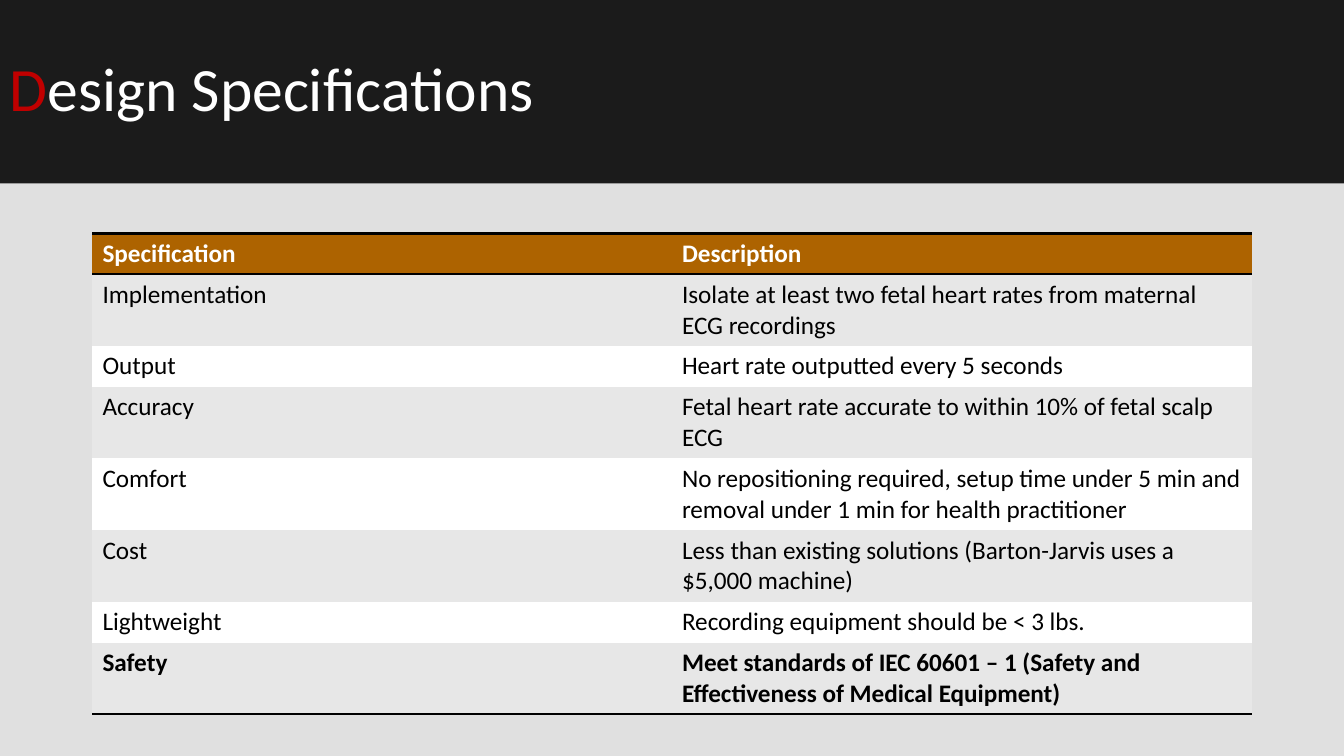
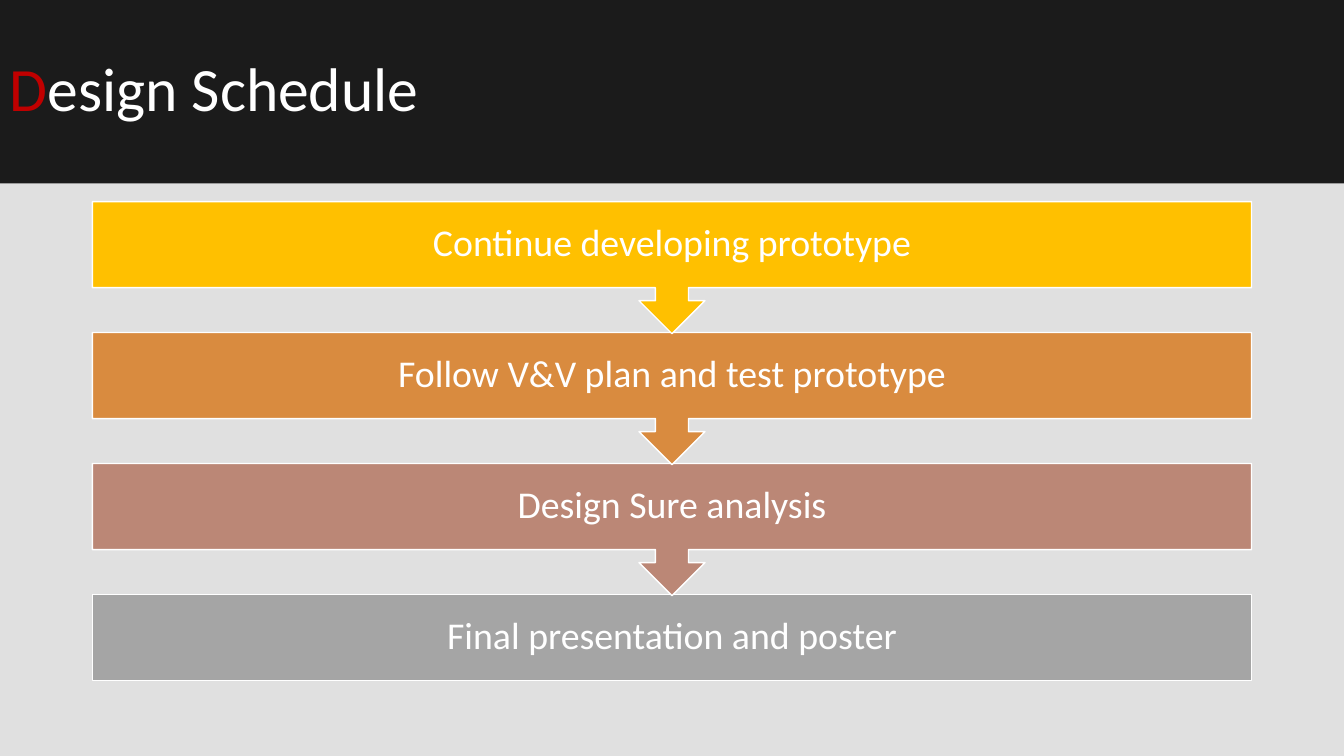
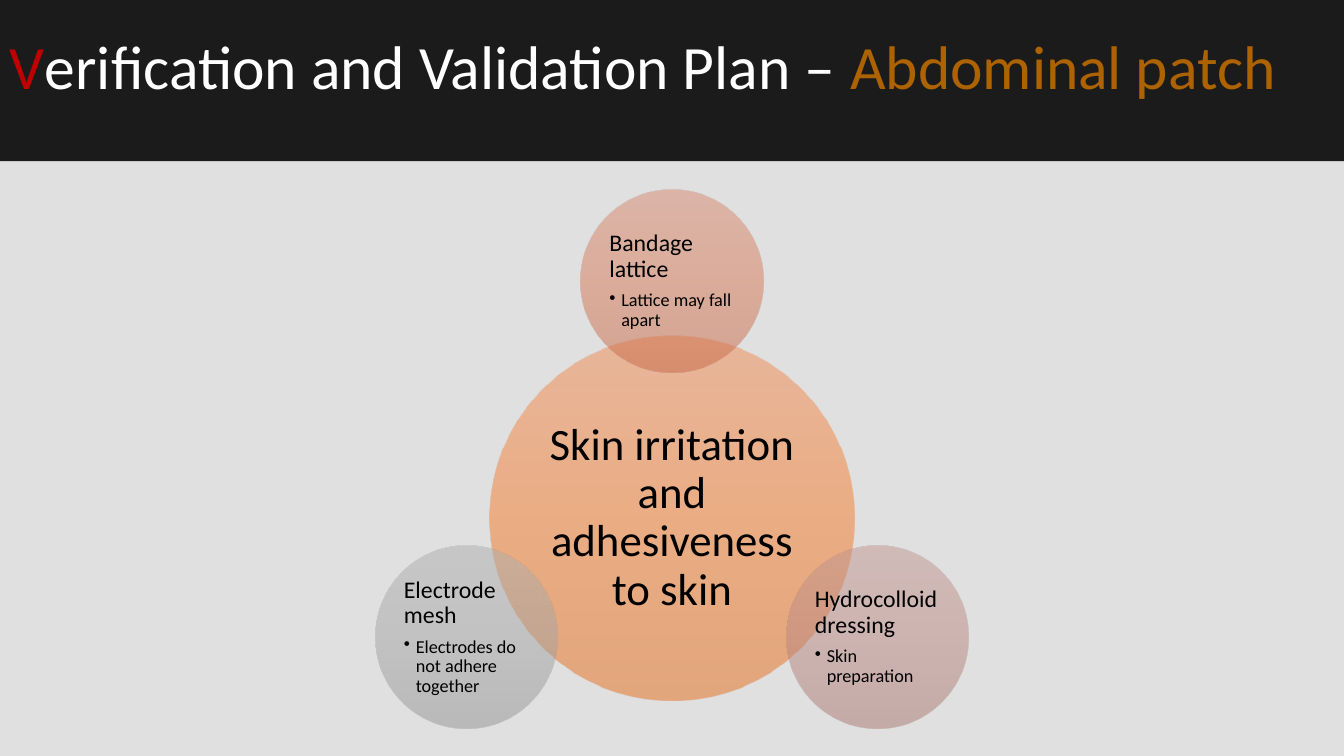
"""Build a three-slide design review deck: specifications, schedule and validation plan."""
from dataclasses import dataclass
from math import cos, radians, sin

from lxml.etree import SubElement
from pptx import Presentation
from pptx.dml.color import RGBColor
from pptx.enum.shapes import MSO_SHAPE
from pptx.enum.text import MSO_ANCHOR, PP_ALIGN
from pptx.oxml.ns import qn
from pptx.util import Cm, Pt


@dataclass(frozen=True)
class Theme:
    font: str = "Calibri"
    page: str = "E0E0E0"
    band: str = "1B1B1B"
    white: str = "FFFFFF"
    black: str = "000000"
    initial: str = "C00000"
    accent: str = "AD6300"
    stripe: str = "E7E7E7"
    title_size: int = 44
    hub_size: int = 32
    step_size: int = 27
    table_size: int = 18
    petal_size: int = 17
    bullet_size: int = 13


THEME = Theme()
PAGE_WIDTH, PAGE_HEIGHT = 33.87, 19.05
BAND_HEIGHT = 4.62
MARGIN = 2.33
CONTENT_WIDTH = PAGE_WIDTH - 2 * MARGIN

SPECIFICATIONS = [
    ("Specification", "Description"),
    ("Implementation", "Isolate at least two fetal heart rates from maternal ECG recordings"),
    ("Output", "Heart rate outputted every 5 seconds"),
    ("Accuracy", "Fetal heart rate accurate to within 10% of fetal scalp ECG"),
    ("Comfort", "No repositioning required, setup time under 5 min and removal under 1 min "
                "for health practitioner"),
    ("Cost", "Less than existing solutions (Barton-Jarvis uses a $5,000 machine)"),
    ("Lightweight", "Recording equipment should be < 3 lbs."),
    ("Safety", "Meet standards of IEC 60601 – 1 (Safety and Effectiveness of Medical Equipment)"),
]

STEPS = [
    ("Continue developing prototype", "FFC000"),
    ("Follow V&V plan and test prototype", "D98B3F"),
    ("Design Sure analysis", "BB8776"),
    ("Final presentation and poster", "A5A5A5"),
]

HUB = ("Skin irritation and adhesiveness to skin", ("F18C57", "F67B28", "E56C19"))
PETALS = [
    ("Bandage lattice", "Lattice may fall apart", ("D78B72", "D77956", "C66846")),
    ("Hydrocolloid dressing", "Skin preparation", ("C19791", "BC8880", "AA766E")),
    ("Electrode mesh", "Electrodes do not adhere together", ("AFAFAF", "A5A5A5", "939393")),
]


def rgb(color):
    return RGBColor.from_string(color)


def add_span(para, text, size, color, bold=False):
    span = para.add_run()
    span.text = text
    span.font.name = THEME.font
    span.font.size = Pt(size)
    span.font.bold = bold
    span.font.color.rgb = rgb(color)


def add_box(page, kind, left, top, width, height, inset):
    box = page.shapes.add_shape(kind, Cm(left), Cm(top), Cm(width), Cm(height))
    box.shadow.inherit = False
    frame = box.text_frame
    frame.word_wrap = True
    frame.vertical_anchor = MSO_ANCHOR.MIDDLE
    frame.margin_left = frame.margin_right = Cm(inset)
    frame.margin_top = frame.margin_bottom = Cm(inset)
    return box


def style_para(para, align=PP_ALIGN.LEFT, after=0):
    para.alignment = align
    para.line_spacing = 0.9
    para.space_after = Pt(after)
    return para


def fill_solid(box, color):
    box.fill.solid()
    box.fill.fore_color.rgb = rgb(color)


def fill_glass(box, colors):
    gradient = SubElement(box._element.spPr, qn("a:gradFill"), rotWithShape="1")
    stops = SubElement(gradient, qn("a:gsLst"))
    for index, color in enumerate(colors):
        stop = SubElement(stops, qn("a:gs"), pos=str(index * 50000))
        tint = SubElement(stop, qn("a:srgbClr"), val=color)
        SubElement(tint, qn("a:alpha"), val="50000")
    SubElement(gradient, qn("a:lin"), ang="5400000", scaled="0")
    box.line.fill.background()


def add_title(page, spans, top=0):
    band = add_box(page, MSO_SHAPE.RECTANGLE, 0, top, PAGE_WIDTH, BAND_HEIGHT, 0.25)
    fill_solid(band, THEME.band)
    band.line.fill.background()
    para = style_para(band.text_frame.paragraphs[0])
    for text, color in spans:
        add_span(para, text, THEME.title_size, color)


def add_border(cell, side):
    line = SubElement(cell._tc.get_or_add_tcPr(), qn(f"a:{side}"), w=str(Pt(2)))
    SubElement(SubElement(line, qn("a:solidFill")), qn("a:srgbClr"), val=THEME.black)


def build_specifications(page):
    add_title(page, [("D", THEME.initial), ("esign Specifications", THEME.white)])
    row_height, last = 1.03, len(SPECIFICATIONS) - 1
    table = page.shapes.add_table(
        len(SPECIFICATIONS), 2, Cm(MARGIN), Cm(5.88),
        Cm(CONTENT_WIDTH), Cm(row_height * len(SPECIFICATIONS))).table
    no_style = "{2D5ABB26-0587-4C30-8999-92F81FD0307C}"
    table._tbl.tblPr.find(qn("a:tableStyleId")).text = no_style
    for row, texts in enumerate(SPECIFICATIONS):
        if row == 0:
            fill, color, sides = THEME.accent, THEME.white, ("lnT", "lnB")
        else:
            fill = THEME.stripe if row % 2 else THEME.white
            color, sides = THEME.black, ("lnB",) if row == last else ()
        for column, text in enumerate(texts):
            cell = table.cell(row, column)
            for side in sides:
                add_border(cell, side)
            fill_solid(cell, fill)
            para = cell.text_frame.paragraphs[0]
            add_span(para, text, THEME.table_size, color, bold=row in (0, last))


def build_schedule(page):
    add_title(page, [("D", THEME.initial), ("esign Schedule", THEME.white)])
    first_top, pitch, bar_height, callout_height = 5.08, 3.3, 2.17, 3.33
    last = len(STEPS) - 1
    for index, (text, color) in reversed(list(enumerate(STEPS))):
        kind, height = MSO_SHAPE.DOWN_ARROW_CALLOUT, callout_height
        if index == last:
            kind, height = MSO_SHAPE.RECTANGLE, bar_height
        step = add_box(page, kind, MARGIN, first_top + index * pitch, CONTENT_WIDTH, height, 0.53)
        if index != last:
            step.adjustments[3] = bar_height / callout_height
        fill_solid(step, color)
        step.line.color.rgb = rgb(THEME.white)
        step.line.width = Pt(1)
        para = style_para(step.text_frame.paragraphs[0], PP_ALIGN.CENTER)
        add_span(para, text, THEME.step_size, THEME.white)


def add_circle(page, center_x, center_y, diameter, colors, inset):
    circle = add_box(page, MSO_SHAPE.OVAL, center_x - diameter / 2, center_y - diameter / 2,
                     diameter, diameter, inset)
    fill_glass(circle, colors)
    return circle.text_frame


def add_bullet(frame, text):
    para = style_para(frame.add_paragraph(), after=2)
    properties = para._p.get_or_add_pPr()
    indent = Cm(0.3)
    properties.set("marL", str(indent))
    properties.set("indent", str(-indent))
    SubElement(properties, qn("a:buChar"), char="•")
    add_span(para, text, THEME.bullet_size, THEME.black)


def build_validation(page):
    center_x, center_y, orbit = PAGE_WIDTH / 2, 13.06, 5.98
    hub_text, hub_colors = HUB
    frame = add_circle(page, center_x, center_y, 9.2, hub_colors, 0.1)
    para = style_para(frame.paragraphs[0], PP_ALIGN.CENTER)
    add_span(para, hub_text, THEME.hub_size, THEME.black)
    for index, (heading, risk, colors) in enumerate(PETALS):
        angle = radians(index * 360 / len(PETALS))
        frame = add_circle(page, center_x + orbit * sin(angle), center_y - orbit * cos(angle),
                           4.6, colors, 0.05)
        para = style_para(frame.paragraphs[0], after=6)
        add_span(para, heading, THEME.petal_size, THEME.black)
        add_bullet(frame, risk)
    add_title(page, [("V", THEME.initial), ("erification and Validation Plan – ", THEME.white),
                     ("Abdominal patch", THEME.accent)], top=-0.56)


def main():
    deck = Presentation()
    deck.slide_width, deck.slide_height = Cm(PAGE_WIDTH), Cm(PAGE_HEIGHT)
    fill_solid(deck.slide_master.background, THEME.page)
    for build in (build_specifications, build_schedule, build_validation):
        build(deck.slides.add_slide(deck.slide_layouts[6]))
    deck.save("out.pptx")


if __name__ == "__main__":
    main()
